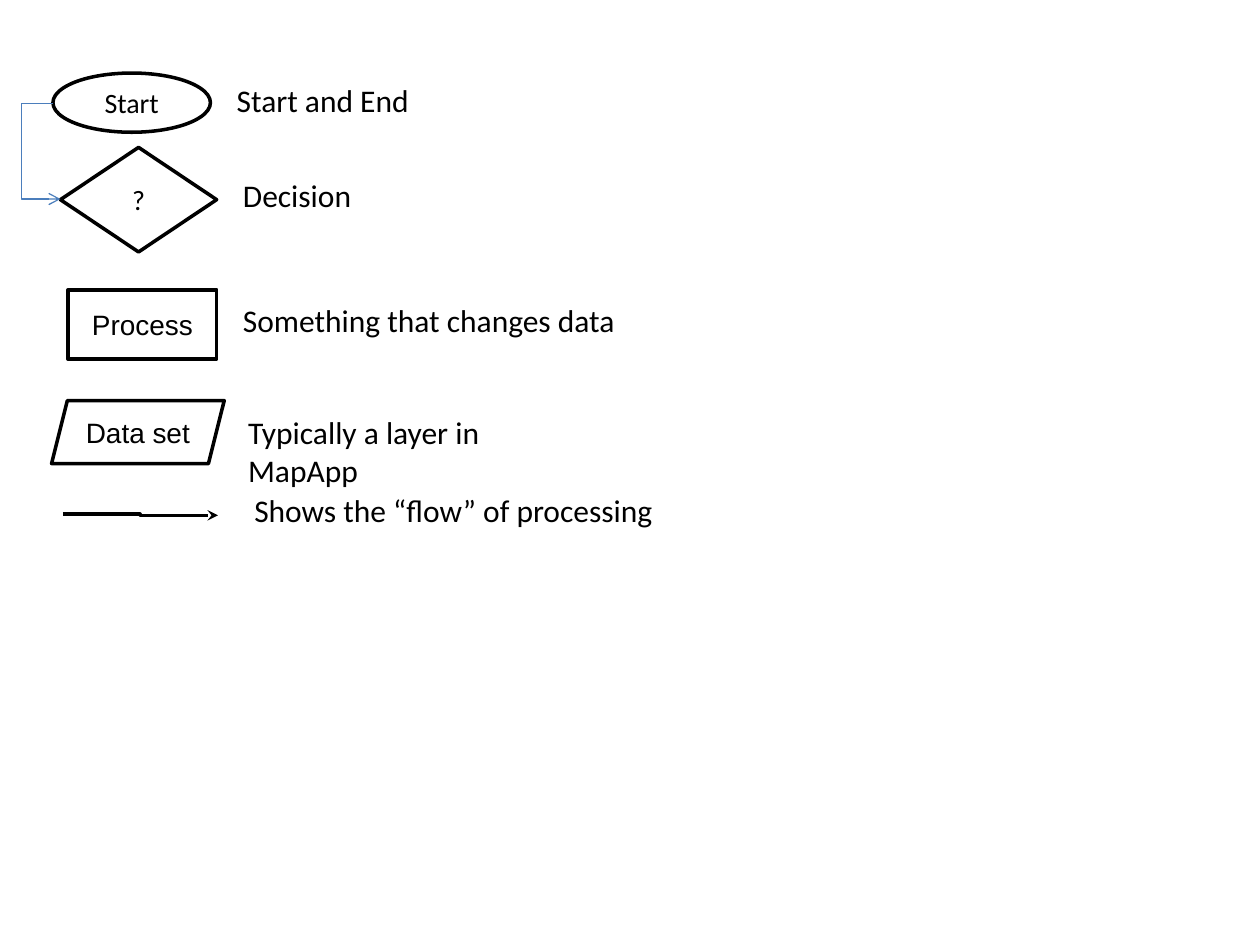
from lxml.etree import SubElement
from pptx import Presentation
from pptx.dml.color import RGBColor
from pptx.enum.shapes import MSO_CONNECTOR, MSO_SHAPE
from pptx.enum.text import MSO_ANCHOR, MSO_AUTO_SIZE, PP_ALIGN
from pptx.oxml.ns import qn
from pptx.util import Inches, Pt

BLACK = RGBColor(0x00, 0x00, 0x00)
WHITE = RGBColor(0xFF, 0xFF, 0xFF)
BLUE = RGBColor(0x4B, 0x7E, 0xBC)

# Flowchart symbols: preset, text, font, (left, top, width, height)
SYMBOLS = [
    (MSO_SHAPE.DIAMOND, "?", "Calibri", (0.48, 1.17, 1.24, 0.83)),
    (MSO_SHAPE.RECTANGLE, "Process", "Arial", (0.54, 2.3, 1.18, 0.55)),
    (MSO_SHAPE.OVAL, "Start", "Calibri", (0.42, 0.58, 1.25, 0.47)),
    (MSO_SHAPE.PARALLELOGRAM, "Data set", "Arial", (0.41, 3.18, 1.37, 0.5)),
]

# Meanings: text, (left, top, width)
MEANINGS = [
    ("Start and End", (1.78, 0.59, 1.58)),
    ("Decision", (1.83, 1.35, 1.07)),
    ("Something that changes data", (1.83, 2.34, 3.19)),
    ("Typically a layer in MapApp", (1.87, 3.23, 2.92)),
    ("Shows the “flow” of processing", (1.92, 3.85, 3.4)),
]
MEANING_HEIGHT = 0.4

# Arrows: start, end, x of the vertical leg, colour, width, arrowhead
ARROWS = [
    ((0.5, 4.08), (1.73, 4.09), 1.11, BLACK, 2, "stealth"),
    ((0.42, 0.82), (0.48, 1.58), 0.17, BLUE, 0.75, "arrow"),
]


def write_text(shape, text, font="Calibri", size=18, align=PP_ALIGN.LEFT,
               anchor=MSO_ANCHOR.TOP):
    frame = shape.text_frame
    frame.word_wrap = False
    frame.vertical_anchor = anchor
    paragraph = frame.paragraphs[0]
    paragraph.alignment = align
    run = paragraph.add_run()
    run.text = text
    run.font.name = font
    run.font.size = Pt(size)
    run.font.color.rgb = BLACK
    return frame


def add_symbol(slide, preset, text, font, box):
    symbol = slide.shapes.add_shape(preset, *map(Inches, box))
    symbol.shadow.inherit = False
    symbol.fill.solid()
    symbol.fill.fore_color.rgb = WHITE
    symbol.line.color.rgb = BLACK
    symbol.line.width = Pt(2)
    write_text(symbol, text, font=font, size=16, align=PP_ALIGN.CENTER,
               anchor=MSO_ANCHOR.MIDDLE)


def add_meaning(slide, text, box):
    meaning = slide.shapes.add_textbox(*map(Inches, (*box, MEANING_HEIGHT)))
    frame = write_text(meaning, text)
    frame.auto_size = MSO_AUTO_SIZE.SHAPE_TO_FIT_TEXT


def add_arrow(slide, start, end, bend_x, color, width, head):
    arrow = slide.shapes.add_connector(
        MSO_CONNECTOR.ELBOW, *map(Inches, (*start, *end)))
    arrow.line.color.rgb = color
    arrow.line.width = Pt(width)
    properties = arrow._element.spPr
    SubElement(arrow.line._get_or_add_ln(), qn("a:tailEnd"), type=head)
    SubElement(properties, qn("a:effectLst"))
    # The bend is a share of the arrow's width, in 1/100000
    bend = round((bend_x - start[0]) / (end[0] - start[0]) * 100000)
    adjustments = properties.find(qn("a:prstGeom")).get_or_add_avLst()
    SubElement(adjustments, qn("a:gd"), name="adj1", fmla=f"val {bend}")


def main():
    deck = Presentation()
    deck.slide_width, deck.slide_height = Inches(10), Inches(7.5)
    slide = deck.slides.add_slide(deck.slide_layouts[6])
    for symbol in SYMBOLS:
        add_symbol(slide, *symbol)
    for meaning in MEANINGS:
        add_meaning(slide, *meaning)
    for arrow in ARROWS:
        add_arrow(slide, *arrow)
    deck.save("out.pptx")


if __name__ == "__main__":
    main()
